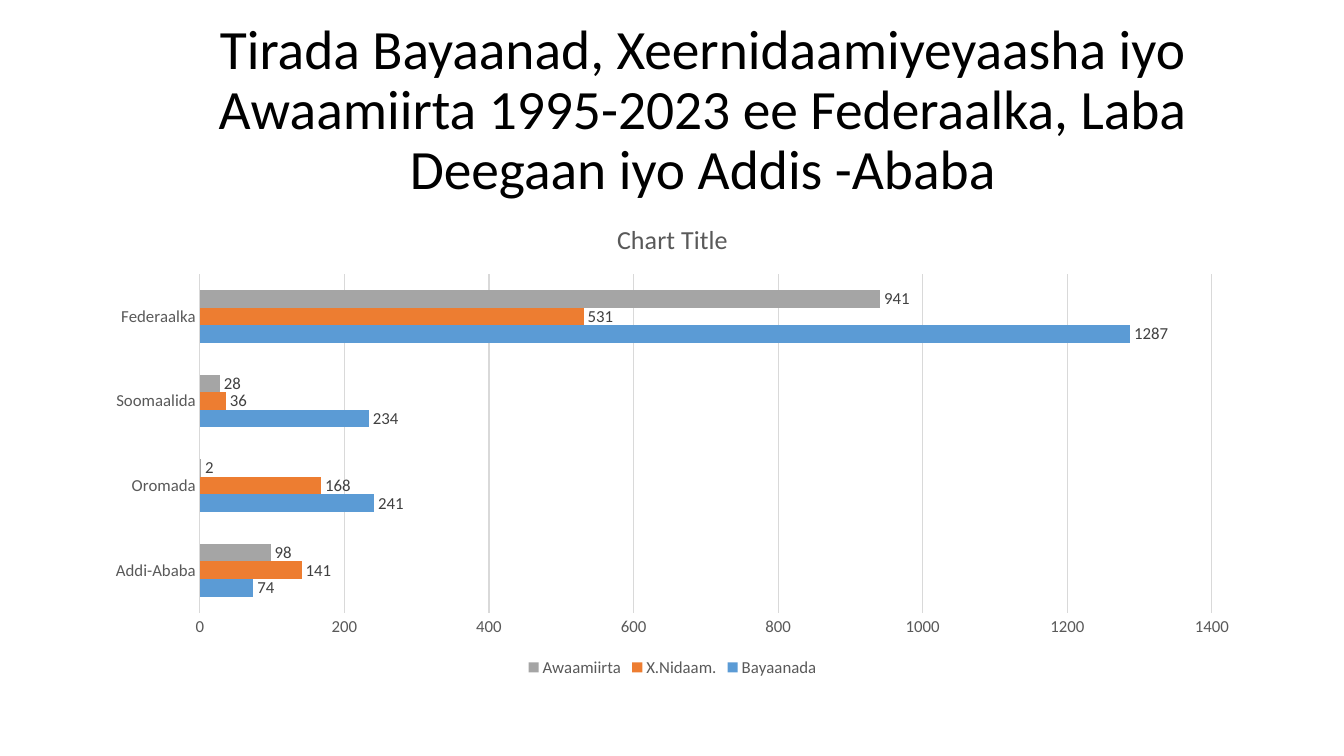
"""Build a slide with a clustered bar chart of laws counted by region."""
import pptx
import pptx.chart.data
import pptx.dml.color
import pptx.enum.chart
import pptx.enum.text
import pptx.util

Inches = pptx.util.Inches
Pt = pptx.util.Pt
RGBColor = pptx.dml.color.RGBColor

TITLE = ("Tirada Bayaanad, Xeernidaamiyeyaasha iyo Awaamiirta 1995-2023 "
         "ee Federaalka, Laba Deegaan iyo Addis -Ababa")
CHART_TITLE = "Chart Title"
REGIONS = ["Addi-Ababa", "Oromada", "Soomaalida", "Federaalka"]
BLACK = RGBColor(0x00, 0x00, 0x00)
GREY = RGBColor(0x59, 0x59, 0x59)
DARK_GREY = RGBColor(0x40, 0x40, 0x40)
LIGHT_GREY = RGBColor(0xD9, 0xD9, 0xD9)
SERIES = [
    ("Bayaanada", [74, 241, 234, 1287], RGBColor(0x5B, 0x9B, 0xD5)),
    ("X.Nidaam.", [141, 168, 36, 531], RGBColor(0xED, 0x7D, 0x31)),
    ("Awaamiirta", [98, 2, 28, 941], RGBColor(0xA5, 0xA5, 0xA5)),
]
FONT = "Calibri"
TITLE_BOX = (1.22, 0.38, 11.5, 1.45)
CHART_BOX = (0.92, 2, 11.5, 4.76)


def style_font(font, size, color):
    font.name = FONT
    font.size = Pt(size)
    font.bold = False
    font.color.rgb = color


def style_line(line):
    line.color.rgb = LIGHT_GREY
    line.width = Pt(0.75)


def add_title(slide):
    text_frame = slide.shapes.add_textbox(*map(Inches, TITLE_BOX)).text_frame
    text_frame.word_wrap = True
    text_frame.vertical_anchor = pptx.enum.text.MSO_ANCHOR.MIDDLE
    text_frame.text = TITLE
    paragraph = text_frame.paragraphs[0]
    paragraph.alignment = pptx.enum.text.PP_ALIGN.CENTER
    paragraph.line_spacing = 0.9
    style_font(paragraph.runs[0].font, 39.6, BLACK)


def add_law_chart(slide):
    data = pptx.chart.data.CategoryChartData()
    data.categories = REGIONS
    for name, values, _ in SERIES:
        data.add_series(name, values)
    chart = slide.shapes.add_chart(
        pptx.enum.chart.XL_CHART_TYPE.BAR_CLUSTERED,
        *map(Inches, CHART_BOX), data).chart
    style_font(chart.font, 10, BLACK)

    chart.has_title = True
    chart.chart_title.include_in_layout = False
    chart.chart_title.text_frame.text = CHART_TITLE
    title_run = chart.chart_title.text_frame.paragraphs[0].runs[0]
    style_font(title_run.font, 18.6, GREY)

    chart.has_legend = True
    chart.legend.position = pptx.enum.chart.XL_LEGEND_POSITION.BOTTOM
    chart.legend.include_in_layout = False
    style_font(chart.legend.font, 12, GREY)

    for axis in (chart.category_axis, chart.value_axis):
        axis.major_tick_mark = pptx.enum.chart.XL_TICK_MARK.NONE
        axis.minor_tick_mark = pptx.enum.chart.XL_TICK_MARK.NONE
        style_font(axis.tick_labels.font, 12, GREY)
    style_line(chart.category_axis.format.line)
    chart.value_axis.format.line.fill.background()
    chart.value_axis.has_major_gridlines = True
    style_line(chart.value_axis.major_gridlines.format.line)

    plot = chart.plots[0]
    plot.gap_width = 182
    plot.overlap = 0
    plot.vary_by_categories = False
    for series, (_, _, color) in zip(plot.series, SERIES):
        series.format.fill.solid()
        series.format.fill.fore_color.rgb = color
        labels = series.data_labels
        labels.show_value = True
        labels.position = pptx.enum.chart.XL_LABEL_POSITION.OUTSIDE_END
        style_font(labels.font, 12, DARK_GREY)


def main():
    presentation = pptx.Presentation()
    presentation.slide_width = Inches(13.33)
    presentation.slide_height = Inches(7.5)
    slide = presentation.slides.add_slide(presentation.slide_layouts[6])
    add_title(slide)
    add_law_chart(slide)
    presentation.save("out.pptx")


if __name__ == "__main__":
    main()
